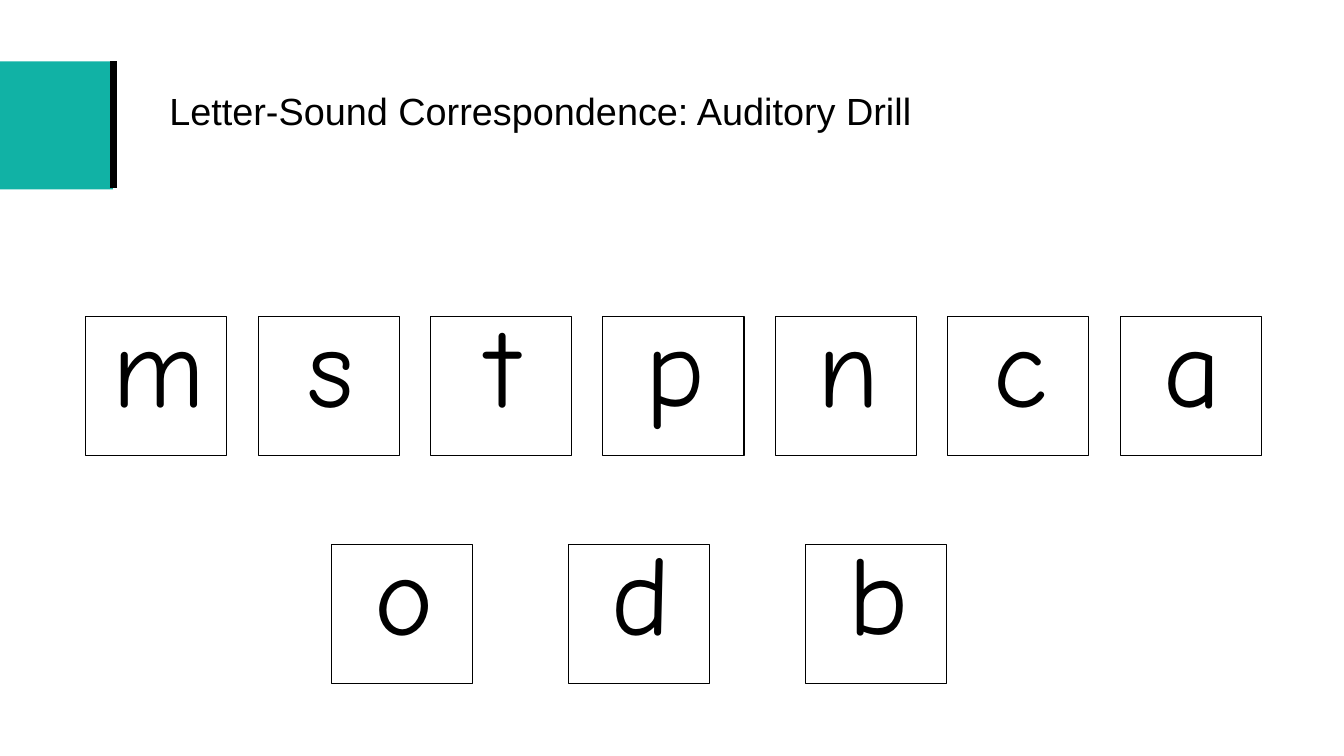
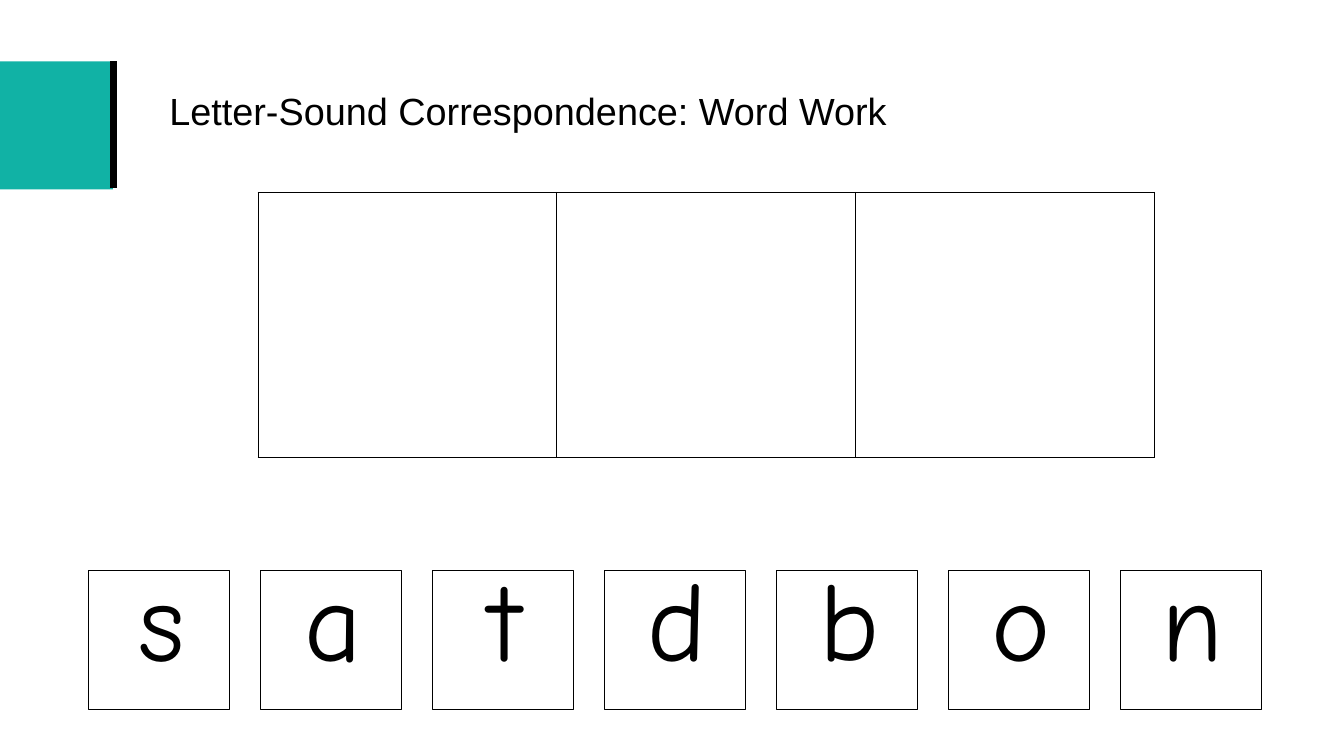
from lxml import etree
from pptx import Presentation
from pptx.dml.color import RGBColor
from pptx.enum import shapes, text
from pptx.oxml import ns
from pptx.util import Inches, Pt

TEAL, BLACK = "11B2A5", "000000"
TITLE_FONT, LETTER_FONT = "Arial", "Comic Neue"
TILE_W, TILE_H = 1.4, 1.38


def rgb(value):
    return RGBColor.from_string(value)


def style_font(font, name, size):
    font.name, font.size = name, Pt(size)
    font.color.rgb = rgb(BLACK)


def set_attributes(obj, values):
    for name, value in values.items():
        setattr(obj, name, value)


def add_rect(s, left, top, width, height):
    sp = s.shapes.add_shape(shapes.MSO_SHAPE.RECTANGLE, Inches(left),
                            Inches(top), Inches(width), Inches(height))
    sp.shadow.inherit = False
    return sp


def set_up_layout(prs, layout):
    """Give the layout its title position, teal block and black bar."""
    set_attributes(layout.placeholders[0], {
        "left": Inches(1.58), "top": Inches(0.4),
        "width": Inches(10.83), "height": Inches(1.45)})
    s = prs.slides[0]
    block = add_rect(s, 0, 0.61, 1.12, 1.27)
    block.fill.solid()
    block.fill.fore_color.rgb = rgb(TEAL)
    block.line.fill.background()
    bar = s.shapes.add_connector(shapes.MSO_CONNECTOR.STRAIGHT, Inches(1.13),
                                 Inches(0.61), Inches(1.13), Inches(1.87))
    bar.line.color.rgb = rgb(BLACK)
    bar.line.width = Pt(5)
    etree.SubElement(bar.element.spPr, ns.qn("a:effectLst"))
    for sp in (block, bar):
        layout.shapes.element.append(sp.element)


def add_title(s, title):
    tf = s.shapes.title.text_frame
    tf.text = title
    set_attributes(tf, {"auto_size": text.MSO_AUTO_SIZE.NONE,
                        "vertical_anchor": text.MSO_ANCHOR.MIDDLE})
    p = tf.paragraphs[0]
    set_attributes(p, {"alignment": text.PP_ALIGN.LEFT, "line_spacing": 0.9})
    style_font(p.runs[0].font, TITLE_FONT, 27)


def add_tile(s, letter, left, top):
    sp = add_rect(s, left, top, TILE_W, TILE_H)
    sp.fill.background()
    sp.line.color.rgb = rgb(BLACK)
    sp.line.width = Pt(0.75)
    tf = sp.text_frame
    tf.text = letter
    set_attributes(tf, {
        "vertical_anchor": text.MSO_ANCHOR.TOP, "word_wrap": True,
        "margin_left": Inches(0.14), "margin_right": Inches(0.1),
        "margin_top": Inches(0.05), "margin_bottom": Inches(0.05)})
    p = tf.paragraphs[0]
    set_attributes(p, {"alignment": text.PP_ALIGN.CENTER,
                       "line_spacing": 0.8, "space_before": Pt(10)})
    style_font(p.runs[0].font, LETTER_FONT, 80)


def add_tile_row(s, letters, first, last, top):
    """Space the tiles evenly between the first and last left edges."""
    pitch = (last - first) / (len(letters) - 1)
    for i, letter in enumerate(letters):
        add_tile(s, letter, first + i * pitch, top)


def add_borders(cell, color, width):
    tc_pr = cell._tc.get_or_add_tcPr()
    for side in ("lnL", "lnR", "lnT", "lnB"):
        ln = etree.SubElement(tc_pr, ns.qn(f"a:{side}"), w=str(Pt(width)))
        fill = etree.SubElement(ln, ns.qn("a:solidFill"))
        etree.SubElement(fill, ns.qn("a:srgbClr"), val=color)


def add_sound_boxes(s, count):
    table = s.shapes.add_table(1, count, Inches(2.56), Inches(1.91),
                               Inches(8.89), Inches(2.63)).table
    set_attributes(table, {"first_row": False, "horz_banding": False})
    for cell in table.iter_cells():
        add_borders(cell, BLACK, 1)
        cell.fill.background()


def main():
    prs = Presentation()
    prs.slide_width, prs.slide_height = Inches(13.33), Inches(7.5)
    layout = prs.slide_layouts.get_by_name("Title Only")
    drill = prs.slides.add_slide(layout)
    set_up_layout(prs, layout)

    add_title(drill, "Letter-Sound Correspondence: Auditory Drill")
    add_tile_row(drill, "mstpnca", 0.85, 11.11, 3.14)
    add_tile_row(drill, "odb", 3.29, 7.99, 5.4)

    word_work = prs.slides.add_slide(layout)
    add_title(word_work, "Letter-Sound Correspondence: Word Work")
    add_sound_boxes(word_work, 3)
    add_tile_row(word_work, "satdbon", 0.88, 11.11, 5.66)

    prs.save("out.pptx")


if __name__ == "__main__":
    main()
